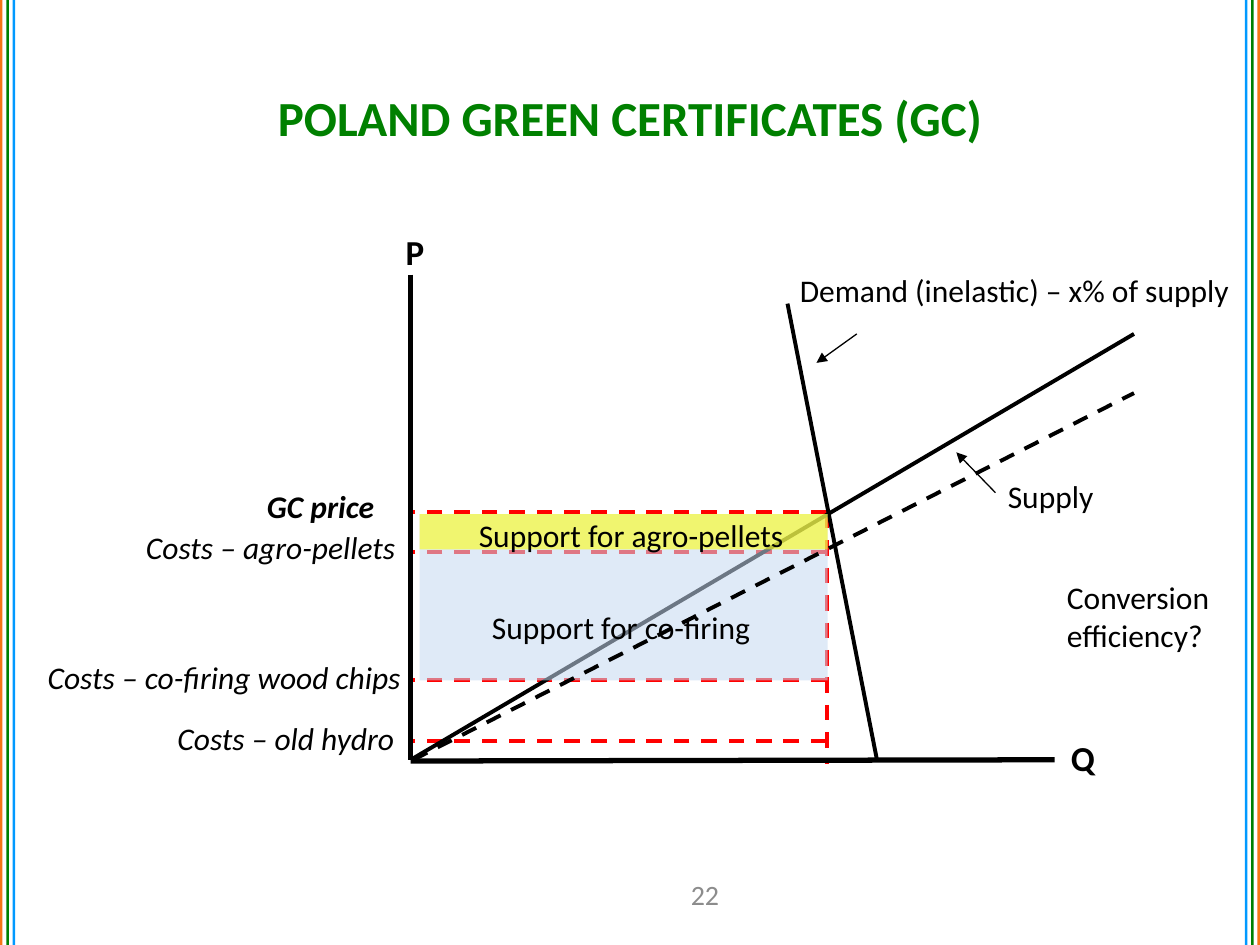
import pptx
import pptx.util
import pptx.dml.color
import pptx.enum.dml
import pptx.enum.shapes
import pptx.enum.text
import pptx.oxml
import pptx.oxml.ns
from pptx.util import Inches

RGBColor = pptx.dml.color.RGBColor
BLACK = RGBColor(0x00, 0x00, 0x00)
RED = RGBColor(0xFF, 0x00, 0x00)
ORANGE = RGBColor(0xF6, 0x76, 0x16)
GREEN = RGBColor(0x00, 0x80, 0x00)
BLUE = RGBColor(0x00, 0x99, 0xFF)
PALE_BLUE = RGBColor(0xC6, 0xD9, 0xF1)
YELLOW = RGBColor(0xFF, 0xFF, 0x00)
GREY = RGBColor(0x8C, 0x8C, 0x8C)

LEFT = pptx.enum.text.PP_ALIGN.LEFT
CENTER = pptx.enum.text.PP_ALIGN.CENTER
TOP = pptx.enum.text.MSO_ANCHOR.TOP
MIDDLE = pptx.enum.text.MSO_ANCHOR.MIDDLE
RECTANGLE = pptx.enum.shapes.MSO_SHAPE.RECTANGLE
STRAIGHT = pptx.enum.shapes.MSO_CONNECTOR.STRAIGHT
DASH = pptx.enum.dml.MSO_LINE.DASH

deck = pptx.Presentation()
deck.slide_width, deck.slide_height = Inches(10), Inches(7.5)
page = deck.slides.add_slide(deck.slide_layouts[6])


def add_text(text, left, top, width, height, align=LEFT, anchor=TOP, **font_values):
    box = page.shapes.add_textbox(Inches(left), Inches(top), Inches(width), Inches(height))
    box.text_frame.word_wrap = True
    box.text_frame.vertical_anchor = anchor
    para = box.text_frame.paragraphs[0]
    para.alignment = align
    span = para.add_run()
    span.text = text
    span.font.color.rgb = font_values.pop("color", BLACK)
    values = {"name": "Calibri", "size": pptx.util.Pt(18), **font_values}
    for name, value in values.items():
        setattr(span.font, name, value)


def add_line(start, end, color=BLACK, width=2.25, dash=None, arrow=False):
    line = page.shapes.add_connector(STRAIGHT, *map(Inches, start + end))
    line.line.color.rgb = color
    line.line.width = pptx.util.Pt(width)
    if dash:
        line.line.dash_style = dash
    if arrow:
        tail = pptx.oxml.parse_xml(
            f'<a:tailEnd {pptx.oxml.ns.nsdecls("a")} type="triangle"/>')
        line.line._get_or_add_ln().append(tail)
    properties = line._element.spPr
    properties.append(pptx.oxml.parse_xml(f'<a:effectLst {pptx.oxml.ns.nsdecls("a")}/>'))


# Stripes along both page edges
stripe_width = 0.02
for number, color in enumerate([ORANGE, GREEN, BLUE]):
    inset = 0.05 * number
    for left in (inset, 10 - stripe_width - inset):
        stripe = page.shapes.add_shape(
            RECTANGLE, Inches(left), 0, Inches(stripe_width), deck.slide_height)
        stripe.shadow.inherit = False
        stripe.fill.solid()
        stripe.fill.fore_color.rgb = color
        stripe.line.fill.background()

# Title and page number
add_text("POLAND GREEN CERTIFICATES (GC)", 0.5, 0.3, 9, 1.25, CENTER, MIDDLE,
         size=pptx.util.Pt(28), bold=True, color=GREEN)
add_text("22", 5.16, 6.9, 0.87, 0.4, CENTER, MIDDLE, size=pptx.util.Pt(16), color=GREY)

# Price and cost levels
add_line((6.56, 4.07), (6.56, 6.06), RED, dash=DASH)
for level in (4.06, 4.38, 5.4, 5.88):
    add_line((6.56, level), (3.26, level), RED, dash=DASH)
for text, left, top, width, bold in [
    ("GC price", 2.02, 3.82, 1.25, True),
    ("Costs – agro-pellets", 1.06, 4.14, 2.52, False),
    ("Costs – co-firing wood chips", 0.28, 5.17, 3.15, False),
    ("Costs – old hydro", 1.31, 5.66, 2.19, False),
]:
    add_text(text, left, top, width, 0.4, italic=True, bold=bold)

# Axes
add_line((3.26, 2.18), (3.26, 6.03), width=3)
add_line((8.37, 6.03), (3.26, 6.04), width=3)
for text, left, top in [("P", 3.12, 1.78), ("Q", 8.4, 5.8)]:
    add_text(text, left, top, 1.25, 0.44, size=pptx.util.Pt(20), bold=True)

# Demand and supply, with pointers
add_line((6.96, 6.03), (6.25, 2.41))
add_line((3.26, 6.03), (9, 2.65))
add_line((6.8, 2.65), (6.48, 2.88), width=0.75, arrow=True)
add_line((7.9, 3.91), (7.59, 3.59), width=0.75, arrow=True)
add_text("Demand (inelastic) – x% of supply", 6.25, 2.1, 3.63, 0.4)
add_text("Supply", 7.9, 3.74, 1.35, 0.4)
add_text("Conversion efficiency?", 8.37, 4.54, 1.47, 0.71)

# Translucent support areas
for text, color, height, text_left, text_top in [
    ("Support for co-firing", PALE_BLUE, 1.32, 3.28, 4.78),
    ("Support for agro-pellets", YELLOW, 0.28, 3.36, 4.05),
]:
    area = page.shapes.add_shape(
        RECTANGLE, Inches(3.33), Inches(4.08), Inches(3.24), Inches(height))
    area.shadow.inherit = False
    area.fill.solid()
    area.fill.fore_color.rgb = color
    area.line.fill.background()
    tint = area._element.spPr.find(".//" + pptx.oxml.ns.qn("a:srgbClr"))
    tint.append(pptx.oxml.parse_xml(
        f'<a:alpha {pptx.oxml.ns.nsdecls("a")} val="55000"/>'))
    add_text(text, text_left, text_top, 3.3, 0.4, CENTER)

# Shifted supply
add_line((3.28, 6.03), (9, 3.12), dash=DASH)

deck.save("out.pptx")
